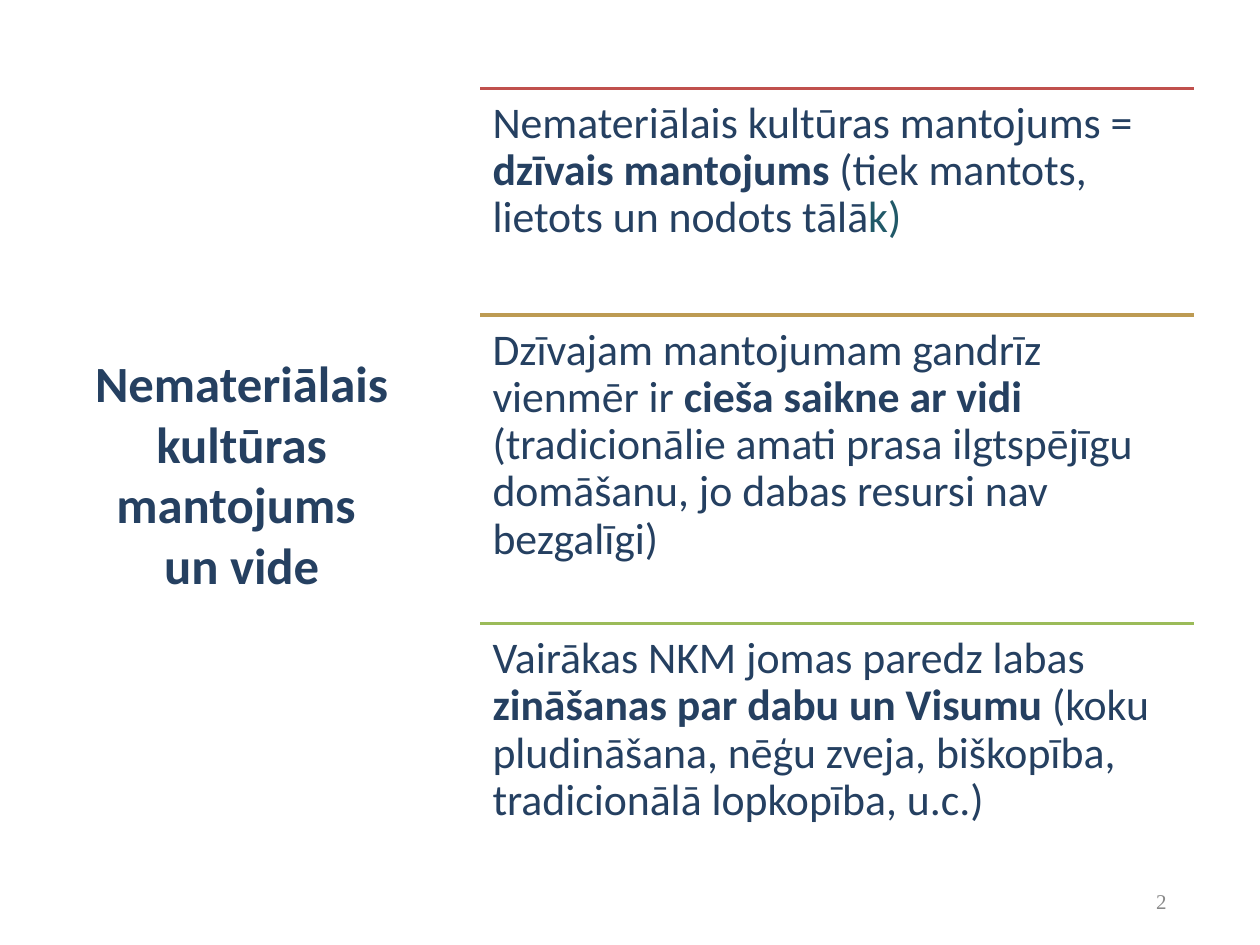
from typing import NamedTuple

from lxml.etree import SubElement
from pptx import Presentation
from pptx.dml.color import RGBColor
from pptx.enum.shapes import MSO_CONNECTOR as Connector
from pptx.enum.text import MSO_ANCHOR as Anchor, MSO_AUTO_SIZE as AutoSize, PP_ALIGN as Align
from pptx.oxml.ns import qn
from pptx.util import Cm, Pt

NAVY, TEAL, GREY = "254061", "215968", "898989"
POINT_LEFT, POINT_WIDTH = 9.68, 14.38


class Span(NamedTuple):
    text: str
    bold: bool = False
    color: str = NAVY


class Point(NamedTuple):
    top: float
    height: float
    rule_color: str
    spans: list[Span]


POINTS = [
    Point(1.78, 4.57, "C0504D", [
        Span("Nemateriālais kultūras mantojums = "),
        Span("dzīvais mantojums ", bold=True),
        Span("(tiek mantots, lietots un nodots tālā"),
        Span("k)", color=TEAL),
    ]),
    Point(6.35, 6.22, "BD9B53", [
        Span("Dzīvajam mantojumam gandrīz vienmēr ir "),
        Span("cieša saikne ar vidi ", bold=True),
        Span("(tradicionālie amati prasa ilgtspējīgu domāšanu, "
             "jo dabas resursi nav bezgalīgi)"),
    ]),
    Point(12.57, 4.57, "9BBB59", [
        Span("Vairākas NKM jomas paredz labas"),
        Span(" zināšanas par dabu un Visumu ", bold=True),
        Span("(koku pludināšana, nēģu zveja, biškopība, "
             "tradicionālā lopkopība, u.c.)"),
    ]),
]


def rgb(color: str) -> RGBColor:
    return RGBColor.from_string(color)


def add_span(para, span: Span, size: float, font: str = "Calibri") -> None:
    run = para.add_run()
    run.text = span.text
    run.font.name = font
    run.font.size = Pt(size)
    run.font.bold = span.bold
    run.font.color.rgb = rgb(span.color)


def format_frame(frame, inset: float, anchor: Anchor) -> None:
    frame.word_wrap = True
    frame.auto_size = AutoSize.NONE
    frame.vertical_anchor = anchor
    frame.margin_left = frame.margin_right = Cm(inset)
    frame.margin_top = frame.margin_bottom = Cm(inset)


def add_title(page) -> None:
    title = page.shapes.title
    title.left, title.top = Cm(1.32), Cm(1.78)
    title.width, title.height = Cm(7.11), Cm(15.52)
    format_frame(title.text_frame, 0.13, Anchor.MIDDLE)
    para = title.text_frame.paragraphs[0]
    para.alignment = Align.CENTER
    add_span(para, Span("Nemateriālais kultūras mantojums ", bold=True), 29)
    para.add_line_break()
    add_span(para, Span("un vide", bold=True), 29)


def add_point(page, point: Point) -> None:
    # Coloured rule above the text
    rule = page.shapes.add_connector(
        Connector.STRAIGHT, Cm(POINT_LEFT), Cm(point.top),
        Cm(POINT_LEFT + POINT_WIDTH), Cm(point.top))
    rule.line.color.rgb = rgb(point.rule_color)
    rule.line.width = Pt(2)
    SubElement(rule.element.spPr, qn("a:effectLst"))

    # Text below the rule
    box = page.shapes.add_textbox(
        Cm(POINT_LEFT), Cm(point.top), Cm(POINT_WIDTH), Cm(point.height))
    format_frame(box.text_frame, 0.25, Anchor.TOP)
    para = box.text_frame.paragraphs[0]
    para.line_spacing = 0.9
    for span in point.spans:
        add_span(para, span, 25)


def add_page_number(page) -> None:
    box = page.shapes.add_textbox(Cm(17.93), Cm(17.65), Cm(5.72), Cm(1.02))
    format_frame(box.text_frame, 0.13, Anchor.MIDDLE)
    para = box.text_frame.paragraphs[0]
    para.alignment = Align.RIGHT
    add_span(para, Span("2", color=GREY), 12, "Times New Roman")


def main() -> None:
    deck = Presentation()
    deck.slide_width, deck.slide_height = Cm(25.4), Cm(19.05)
    page = deck.slides.add_slide(deck.slide_layouts[5])
    add_title(page)
    add_page_number(page)
    for point in POINTS:
        add_point(page, point)
    deck.save("out.pptx")


if __name__ == "__main__":
    main()
